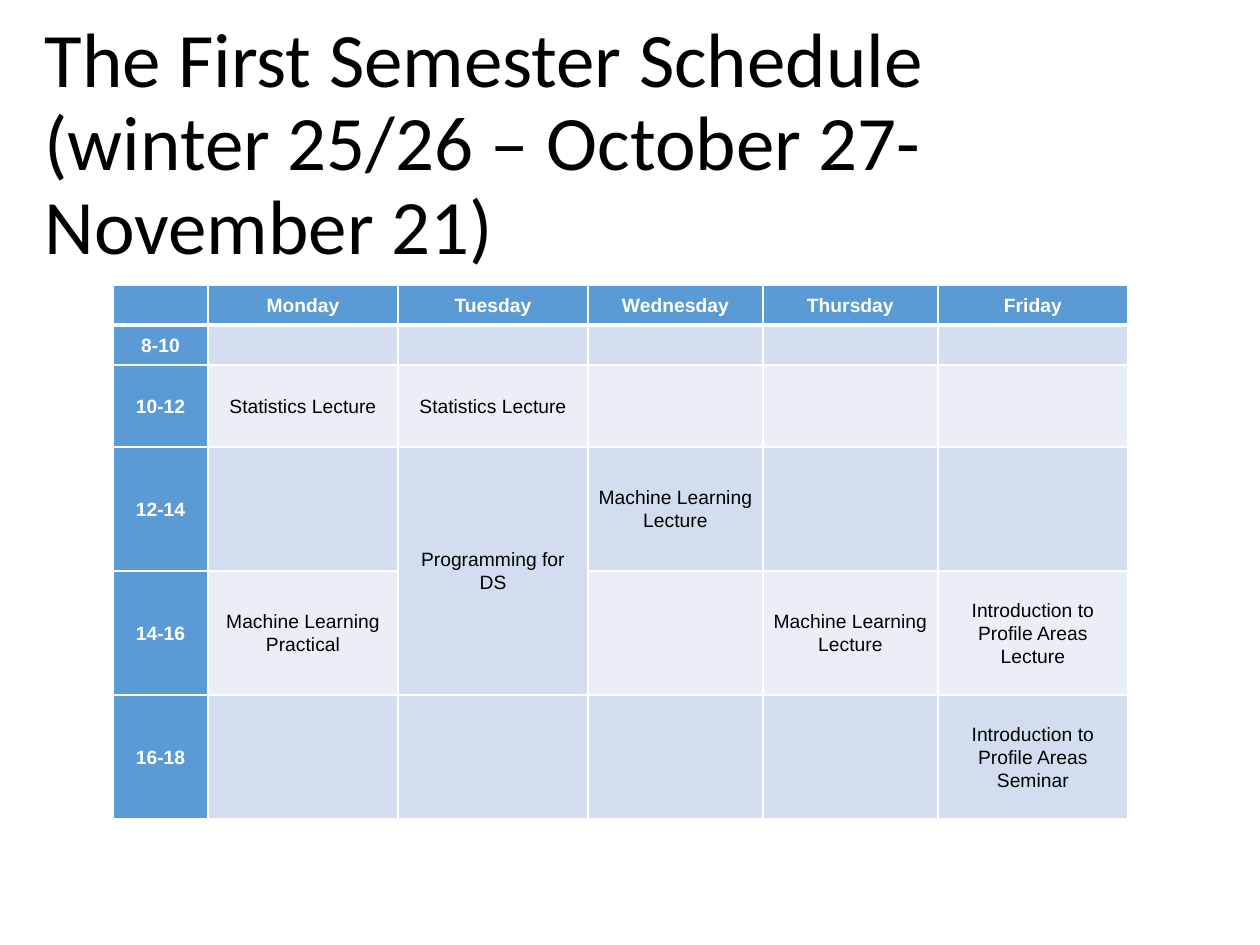
from lxml.etree import SubElement
from pptx import Presentation
from pptx.dml.color import RGBColor
from pptx.enum.text import MSO_ANCHOR, PP_ALIGN
from pptx.oxml.ns import qn
from pptx.util import Pt

PX = 914400 // 126
C = {"head": "5B9BD5", "dark": "D2DEEF", "light": "EAEFF7",
     "white": "FFFFFF", "black": "000000"}


def add_run(p, text, font, size, color, bold=False):
    r = p.add_run()
    r.text = text
    r.font.name, r.font.size, r.font.bold = font, Pt(size), bold
    r.font.color.rgb = RGBColor.from_string(C[color])


def set_border(cell, side, width):
    ln = SubElement(cell._tc.get_or_add_tcPr(), qn(f"a:ln{side}"), w=str(Pt(width)))
    fill = SubElement(ln, qn("a:solidFill"))
    SubElement(fill, qn("a:srgbClr"), val=C["white"])


prs = Presentation()
prs.slide_width, prs.slide_height = 1260 * PX, 945 * PX
s = prs.slides.add_slide(prs.slide_layouts[5])

# Title
title = s.shapes.title
title.left, title.top, title.width, title.height = [v * PX for v in (32, 34, 1165, 224)]
tf = title.text_frame
tf.word_wrap = True
tf.vertical_anchor = MSO_ANCHOR.MIDDLE
p = tf.paragraphs[0]
p.alignment, p.line_spacing = PP_ALIGN.LEFT, 0.9
add_run(p, "The First Semester Schedule", "Calibri", 44, "black")
p.add_line_break()
add_run(p, "(winter 25/26 – October 27- November 21)", "Calibri", 44, "black")

# Timetable
days = ["", "Monday", "Tuesday", "Wednesday", "Thursday", "Friday"]
slots = ["8-10", "10-12", "12-14", "14-16", "16-18"]
courses = {
    (2, 1): "Statistics Lecture",
    (2, 2): "Statistics Lecture",
    (3, 2): "Programming for DS",
    (3, 3): "Machine Learning Lecture",
    (4, 1): "Machine Learning Practical",
    (4, 4): "Machine Learning Lecture",
    (4, 5): "Introduction to Profile Areas Lecture",
    (5, 5): "Introduction to Profile Areas Seminar",
}
col_widths = [95, 190, 190, 175, 175, 190]
row_heights = [40, 40, 82, 124, 124, 124]
table = s.shapes.add_table(len(row_heights), len(col_widths), 113 * PX, 285 * PX,
                           sum(col_widths) * PX, sum(row_heights) * PX).table
for col, w in zip(table.columns, col_widths):
    col.width = w * PX
for row, h in zip(table.rows, row_heights):
    row.height = h * PX
table.cell(3, 2).merge(table.cell(4, 2))

for i in range(len(row_heights)):
    for j in range(len(col_widths)):
        cell = table.cell(i, j)
        header = i == 0 or j == 0
        text = days[j] if i == 0 else slots[i - 1] if j == 0 else courses.get((i, j), "")

        # A thick line parts the header row from the slots
        for side in "LRTB":
            set_border(cell, side, 3 if (i, side) in [(0, "B"), (1, "T")] else 1)
        cell.fill.solid()
        shade = "head" if header else "dark" if i % 2 else "light"
        cell.fill.fore_color.rgb = RGBColor.from_string(C[shade])

        cell.margin_left = cell.margin_right = 9 * PX
        cell.margin_top = cell.margin_bottom = 0
        cell.vertical_anchor = MSO_ANCHOR.MIDDLE
        if text:
            p = cell.text_frame.paragraphs[0]
            p.alignment, p.line_spacing, p.space_after = PP_ALIGN.CENTER, 1.07, Pt(8)
            add_run(p, text, "Arial", 11, "white" if header else "black", header)

prs.save("out.pptx")
